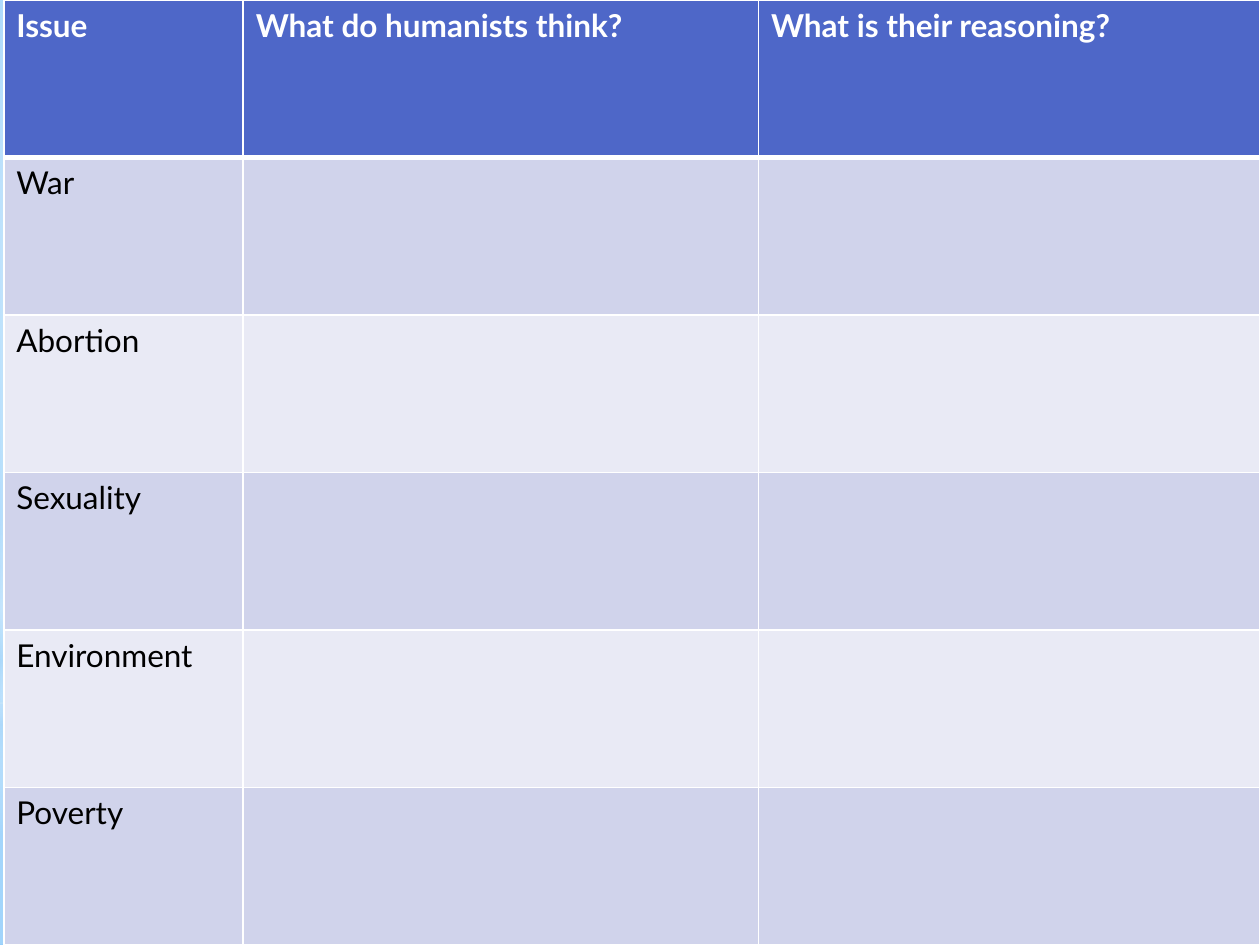
from lxml import etree
from pptx import Presentation
from pptx.dml.color import RGBColor
from pptx.enum.shapes import MSO_SHAPE
from pptx.oxml.ns import qn
from pptx.util import Inches, Pt

RECTANGLE, OVAL = MSO_SHAPE.RECTANGLE, MSO_SHAPE.OVAL

HEADINGS = ["Issue", "What do humanists think?", "What is their reasoning?"]
ISSUES = ["War", "Abortion", "Sexuality", "Environment", "Poverty"]

SLIDE_W, SLIDE_H = 10, 7.5
TABLE_LEFT = 0.03
COLUMN_WIDTHS = [1.9, 4.09, 3.98]
HEADER_FILL, BAND_FILLS = "4E67C8", ["D0D3EB", "E9EAF5"]
RULE_COLOR, RULE_WIDTH, HEADER_RULE_WIDTH = "FFFFFF", 1, 3
HEADER_FONT = {"name": "Lato", "size": Pt(18), "bold": True}
BODY_FONT = {**HEADER_FONT, "bold": False}

# Gradient stops: position %, colour, opacity %.
SKY = [(0, "9ED5FF", 100), (60, "FFFFFF", 100), (100, "5BB9FF", 100)]
SKY_FOCUS = (20, 10, 20, 60)
CENTER = (50, 50, 50, 50)
# Full-width layers: shape, top, height, stops, focus (None: top to bottom).
LAYERS = [
    (RECTANGLE, 5.58, 1.92,
     [(0, "FFFFFF", 91), (37, "FFFFFF", 76), (100, "B4DCFA", 79)], CENTER),
    (RECTANGLE, 0, 5.58,
     [(0, "FFFFFF", 89), (48, "FFFFFF", 62), (100, "B4DCFA", 79)], CENTER),
    (RECTANGLE, 4.12, 2.5,
     [(0, "FFFFFF", 0), (29, "FFFFFF", 30), (45, "B4DCFA", 40),
      (55, "FFFFFF", 26), (65, "B4DCFA", 60), (100, "FFFFFF", 0)], None),
    (OVAL, 1.75, 5.58, [(0, "FFFFFF", 100), (56, "FFFFFF", 0)], CENTER),
]


def rgb(color):
    return RGBColor.from_string(color)


def add_node(parent, tag, **attributes):
    return etree.SubElement(parent, qn(tag), attributes)


def percent(value):
    return str(value * 1000)


def set_gradient(fill, owner, stops, focus):
    """Fill with a circular gradient around focus, or a vertical one."""
    fill.gradient()
    gradient = next(owner.iter(qn("a:gradFill")))
    for child in list(gradient):
        gradient.remove(child)
    stop_list = add_node(gradient, "a:gsLst")
    for position, color, opacity in stops:
        stop = add_node(stop_list, "a:gs", pos=percent(position))
        shade = add_node(stop, "a:srgbClr", val=color)
        if opacity < 100:
            add_node(shade, "a:alpha", val=percent(opacity))
    if focus is None:
        add_node(gradient, "a:lin", ang=str(90 * 60000), scaled="0")
    else:
        circle = add_node(gradient, "a:path", **{"path": "circle"})
        add_node(circle, "a:fillToRect", **dict(zip("ltrb", map(percent, focus))))


def set_borders(cell, widths):
    """Draw cell borders; widths maps L, R, T, B (in that order) to points."""
    properties = cell._tc.get_or_add_tcPr()
    for position, (side, width) in enumerate(widths.items()):
        line = etree.Element(qn(f"a:ln{side}"), w=str(Pt(width)))
        add_node(add_node(line, "a:solidFill"), "a:srgbClr", val=RULE_COLOR)
        properties.insert(position, line)


def fill_cell(cell, text, fill, font_format, font_color):
    cell.fill.solid()
    cell.fill.fore_color.rgb = rgb(fill)
    paragraph = cell.text_frame.paragraphs[0]
    font = paragraph.add_run().font if text else paragraph.font
    if text:
        paragraph.runs[0].text = text
    for attribute, value in font_format.items():
        setattr(font, attribute, value)
    font.color.rgb = rgb(font_color)


def add_backdrop(slide):
    set_gradient(slide.background.fill, slide.element, SKY, SKY_FOCUS)
    for kind, top, height, stops, focus in LAYERS:
        layer = slide.shapes.add_shape(
            kind, 0, Inches(top), Inches(SLIDE_W), Inches(height))
        layer.shadow.inherit = False
        layer.line.fill.background()
        set_gradient(layer.fill, layer.element, stops, focus)


def add_issue_table(slide):
    rows = [HEADINGS] + [[issue, "", ""] for issue in ISSUES]
    table = slide.shapes.add_table(
        len(rows), len(HEADINGS), Inches(TABLE_LEFT), 0,
        Inches(sum(COLUMN_WIDTHS)), Inches(SLIDE_H)).table
    for column, width in zip(table.columns, COLUMN_WIDTHS):
        column.width = Inches(width)

    for r, texts in enumerate(rows):
        table.rows[r].height = Inches(SLIDE_H / len(rows))
        header = r == 0
        fill = HEADER_FILL if header else BAND_FILLS[(r - 1) % 2]
        widths = {"L": RULE_WIDTH, "R": RULE_WIDTH,
                  "T": HEADER_RULE_WIDTH if r == 1 else RULE_WIDTH,
                  "B": HEADER_RULE_WIDTH if header else RULE_WIDTH}
        for c, text in enumerate(texts):
            cell = table.cell(r, c)
            fill_cell(cell, text, fill, HEADER_FONT if header else BODY_FONT,
                      "FFFFFF" if header else "000000")
            set_borders(cell, widths)


def main():
    prs = Presentation()
    prs.slide_width, prs.slide_height = Inches(SLIDE_W), Inches(SLIDE_H)
    slide = prs.slides.add_slide(prs.slide_layouts[6])
    add_backdrop(slide)
    add_issue_table(slide)
    prs.save("out.pptx")


if __name__ == "__main__":
    main()
